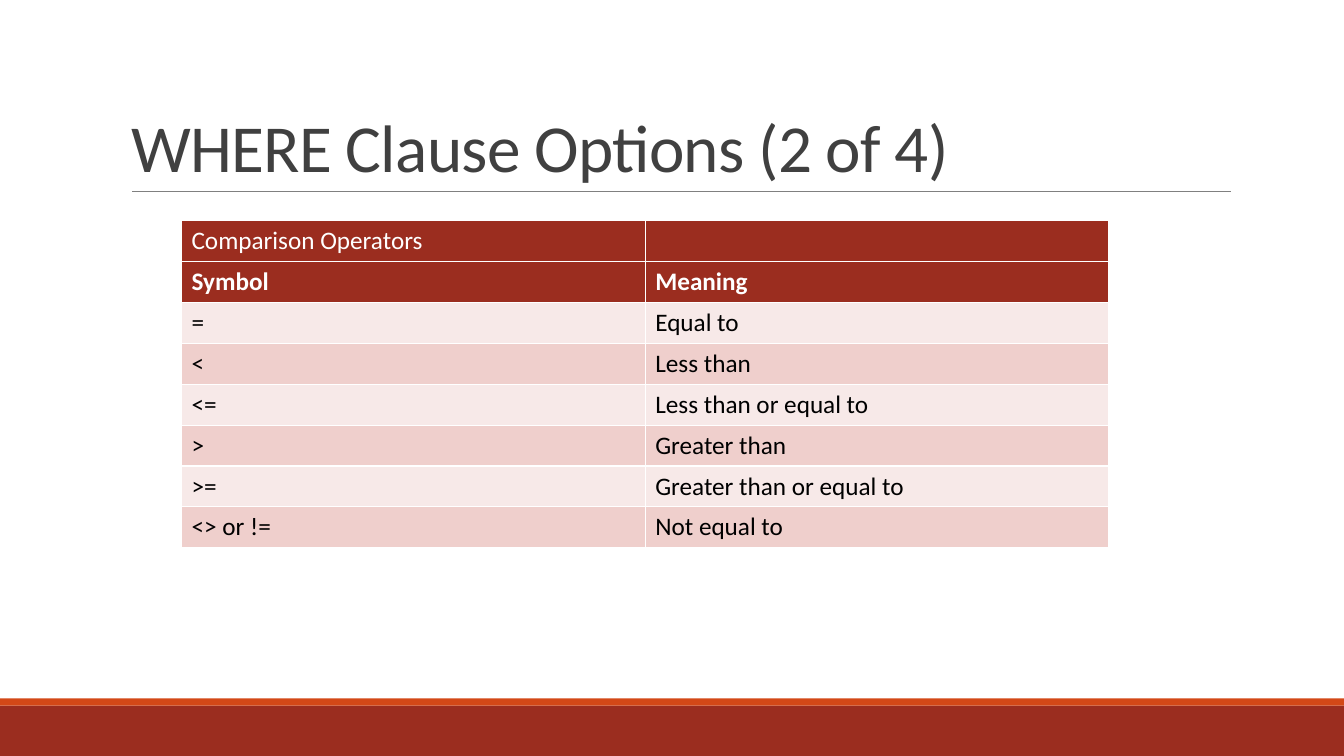
from pptx import Presentation
from pptx import util as u
from pptx.dml import color
from pptx.enum import shapes, text
from pptx.oxml import ns, xmlchemy

RUST, ORANGE, WHITE = "9B2D1F", "D34817", "FFFFFF"
BANDS = ("F7E9E8", "EFCFCC")
OPERATORS = [
    ("Comparison Operators", ""),
    ("Symbol", "Meaning"),
    ("=", "Equal to"),
    ("<", "Less than"),
    ("<=", "Less than or equal to"),
    (">", "Greater than"),
    (">=", "Greater than or equal to"),
    ("<> or !=", "Not equal to"),
]


def paint(target, value):
    """Give a fill a solid colour from a hex string."""
    target.solid()
    target.fore_color.rgb = color.RGBColor.from_string(value)


def style(span, size, value, bold=False):
    """Set the font, size, colour and weight of a run."""
    span.font.name = "Calibri"
    span.font.size = u.Pt(size)
    span.font.bold = bold
    paint(span.font.fill, value)


def add_band(page, box, value):
    """Draw a plain coloured bar in the box."""
    bar = page.shapes.add_shape(shapes.MSO_SHAPE.RECTANGLE, *box)
    bar.shadow.inherit = False
    paint(bar.fill, value)
    bar.line.fill.background()


def add_footer(page, box):
    """Stack a thin orange bar on a rust bar."""
    left, top, width, height = box
    edge = u.Inches(0.07)
    add_band(page, (left, top + edge, width, height - edge), RUST)
    add_band(page, (left, top, width, edge), ORANGE)


def add_title(page, box, wording):
    """Place the title at the foot of the box with a rule beneath it."""
    title = page.shapes.title
    title.left, title.top, title.width, title.height = box
    frame = title.text_frame
    frame.text = wording
    frame.word_wrap = True
    frame.auto_size = text.MSO_AUTO_SIZE.NONE
    frame.vertical_anchor = text.MSO_ANCHOR.BOTTOM
    para = frame.paragraphs[0]
    para.alignment = text.PP_ALIGN.LEFT
    para.line_spacing = 0.85
    style(para.runs[0], 48, "404040")
    para.runs[0].font._element.set("spc", "-50")

    left, top, width, height = box
    start, base = left + u.Inches(0.11), top + height
    rule = page.shapes.add_connector(
        shapes.MSO_CONNECTOR.STRAIGHT, start, base, start + u.Inches(10.9), base)
    rule.line.width = u.Pt(0.5)
    paint(rule.line.fill, "808080")
    rule._element.spPr.append(xmlchemy.OxmlElement("a:effectLst"))


def add_borders(cell):
    """Edge a cell with white lines one point wide."""
    props = cell._tc.get_or_add_tcPr()
    for side in ("lnL", "lnR", "lnT", "lnB"):
        line = props.makeelement(ns.qn(f"a:{side}"), {"w": str(u.Pt(1))})
        fill = xmlchemy.OxmlElement("a:solidFill")
        shade = xmlchemy.OxmlElement("a:srgbClr")
        shade.set("val", WHITE)
        fill.append(shade)
        line.append(fill)
        props.append(line)


def add_operators(page, box, rows):
    """Build the table with two heading rows and banded rows below."""
    table = page.shapes.add_table(len(rows), len(rows[0]), *box).table
    for r, row in enumerate(rows):
        heading = r < 2
        for c, wording in enumerate(row):
            cell = table.cell(r, c)
            add_borders(cell)
            paint(cell.fill, RUST if heading else BANDS[r % 2])
            cell.text = wording
            for span in cell.text_frame.paragraphs[0].runs:
                style(span, 18, WHITE if heading else "000000", r == 1)


def main():
    """Build the slide and save the deck."""
    deck = Presentation()
    deck.slide_width, deck.slide_height = u.Inches(13.33), u.Inches(7.5)
    page = deck.slides.add_slide(deck.slide_layouts[5])
    paint(page.background.fill, WHITE)
    add_footer(page, (0, u.Inches(6.93), deck.slide_width, u.Inches(0.57)))
    add_title(page, [u.Inches(n) for n in (1.2, 0.31, 11, 1.59)],
              "WHERE Clause Options (2 of 4)")
    add_operators(page, [u.Inches(n) for n in (1.8, 2.19, 9.2, 3.24)], OPERATORS)
    deck.save("out.pptx")


if __name__ == "__main__":
    main()
